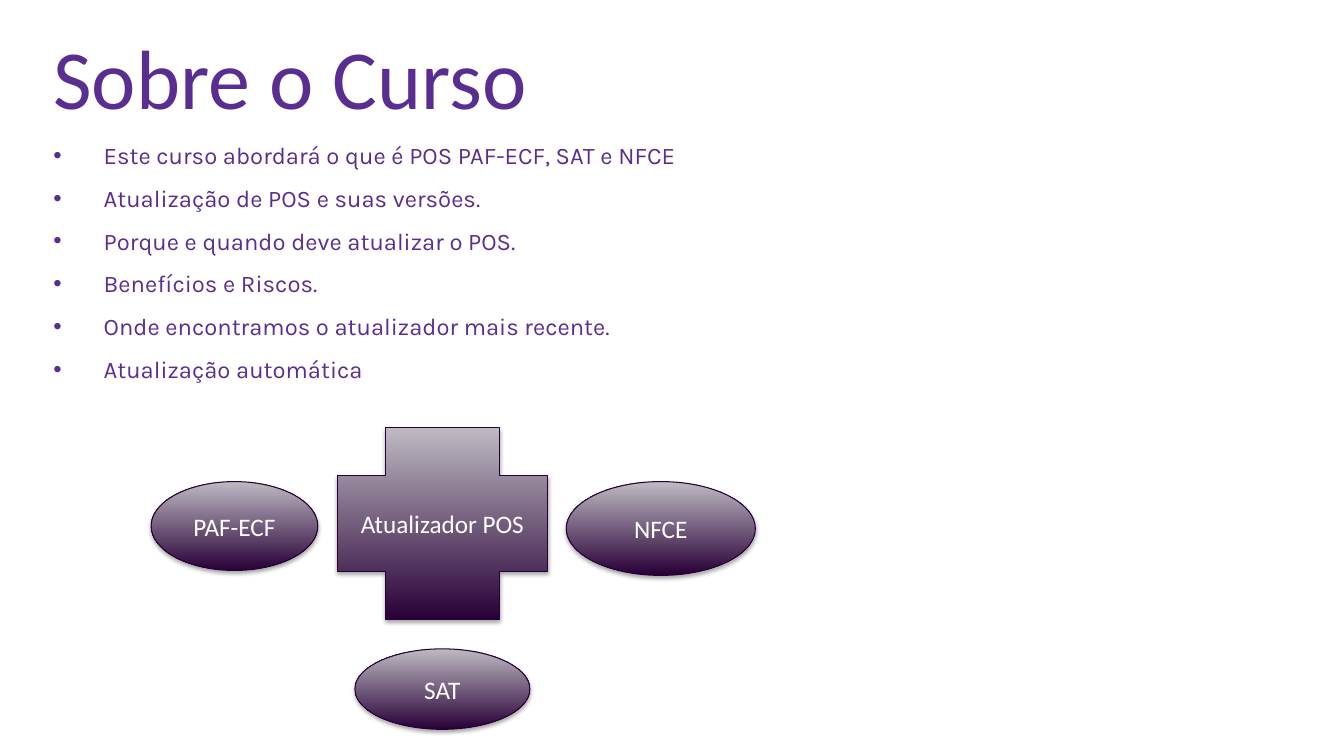
from lxml import etree
from pptx import Presentation
from pptx.dml.color import RGBColor
from pptx.enum import shapes, text
from pptx.oxml import ns
from pptx.util import Pt

COLORS = {"purple": "5A2D91", "dark": "280037", "light": "BEBAC2",
          "outline": "270036", "white": "FFFFFF", "shadow": "000000"}


def style(p, font, size, color):
    p.font.name = font
    p.font.size = Pt(size)
    p.font.color.rgb = RGBColor.from_string(COLORS[color])


def add(parent, tag, **attrs):
    return etree.SubElement(parent, ns.qn(tag), attrs)


prs = Presentation()
prs.slide_width, prs.slide_height = Pt(960), Pt(540)
s = prs.slides.add_slide(prs.slide_layouts[6])

# Title
tf = s.shapes.add_textbox(Pt(31), Pt(15), Pt(864), Pt(90)).text_frame
tf.word_wrap = True
p = tf.paragraphs[0]
p.text = "Sobre o Curso"
style(p, "Calibri", 60, "purple")

# Course topics
topics = [
    "Este curso abordará o que é POS PAF-ECF, SAT e NFCE",
    "Atualização de POS e suas versões.",
    "Porque e quando deve atualizar o POS.",
    "Benefícios e Riscos.",
    "Onde encontramos o atualizador mais recente.",
    "Atualização automática",
]
tf = s.shapes.add_textbox(Pt(31), Pt(91), Pt(549), Pt(151)).text_frame
tf.word_wrap = True
for i, topic in enumerate(topics):
    p = tf.paragraphs[0] if i == 0 else tf.add_paragraph()
    p.text = topic
    pPr = p._p.get_or_add_pPr()
    pPr.set("marL", str(Pt(36)))
    pPr.set("indent", str(Pt(-36)))
    add(pPr, "a:buFont", typeface="Arial")
    add(pPr, "a:buChar", char="•")
    p.line_spacing = 1.3
    p.space_before = Pt(4 if i else 0)
    style(p, "Karla", 17, "purple")

# Updater and the three systems around it
CROSS, OVAL = shapes.MSO_SHAPE.CROSS, shapes.MSO_SHAPE.OVAL
diagram = [
    ("Atualizador POS", CROSS, 241, 305.5, 150, 137),
    ("NFCE", OVAL, 404.5, 344, 135, 67),
    ("PAF-ECF", OVAL, 108, 344, 119, 63.5),
    ("SAT", OVAL, 253.5, 463.5, 125, 57.5),
]
for label, kind, x, y, w, h in diagram:
    sp = s.shapes.add_shape(kind, Pt(x), Pt(y), Pt(w), Pt(h))
    sp.fill.gradient()
    sp.fill.gradient_angle = 90
    for stop, color in zip(sp.fill.gradient_stops, ("dark", "light")):
        stop.color.rgb = RGBColor.from_string(COLORS[color])
    sp.line.color.rgb = RGBColor.from_string(COLORS["outline"])
    sp.line.width = Pt(0.75)

    # Soft shadow straight below
    sp.shadow.inherit = False
    effects = sp._element.spPr.find(ns.qn("a:effectLst"))
    shadow = add(effects, "a:outerShdw", blurRad=str(Pt(3.1)), dist=str(Pt(1.8)),
                 dir="5400000", rotWithShape="0")
    shade = add(shadow, "a:srgbClr", val=COLORS["shadow"])
    add(shade, "a:alpha", val="35000")

    tf = sp.text_frame
    tf.word_wrap = True
    tf.vertical_anchor = text.MSO_ANCHOR.MIDDLE
    p = tf.paragraphs[0]
    p.text = label
    p.alignment = text.PP_ALIGN.CENTER
    style(p, "Calibri", 18, "white")

prs.save("out.pptx")
